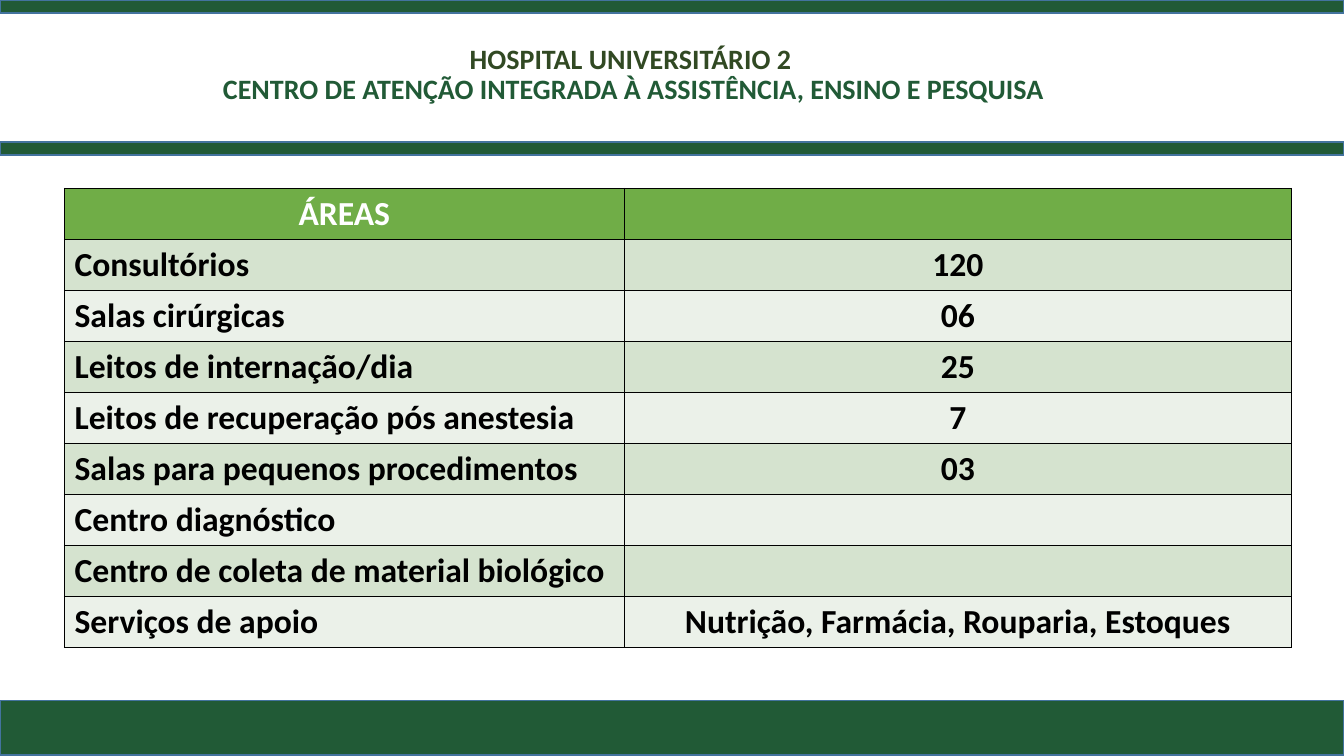
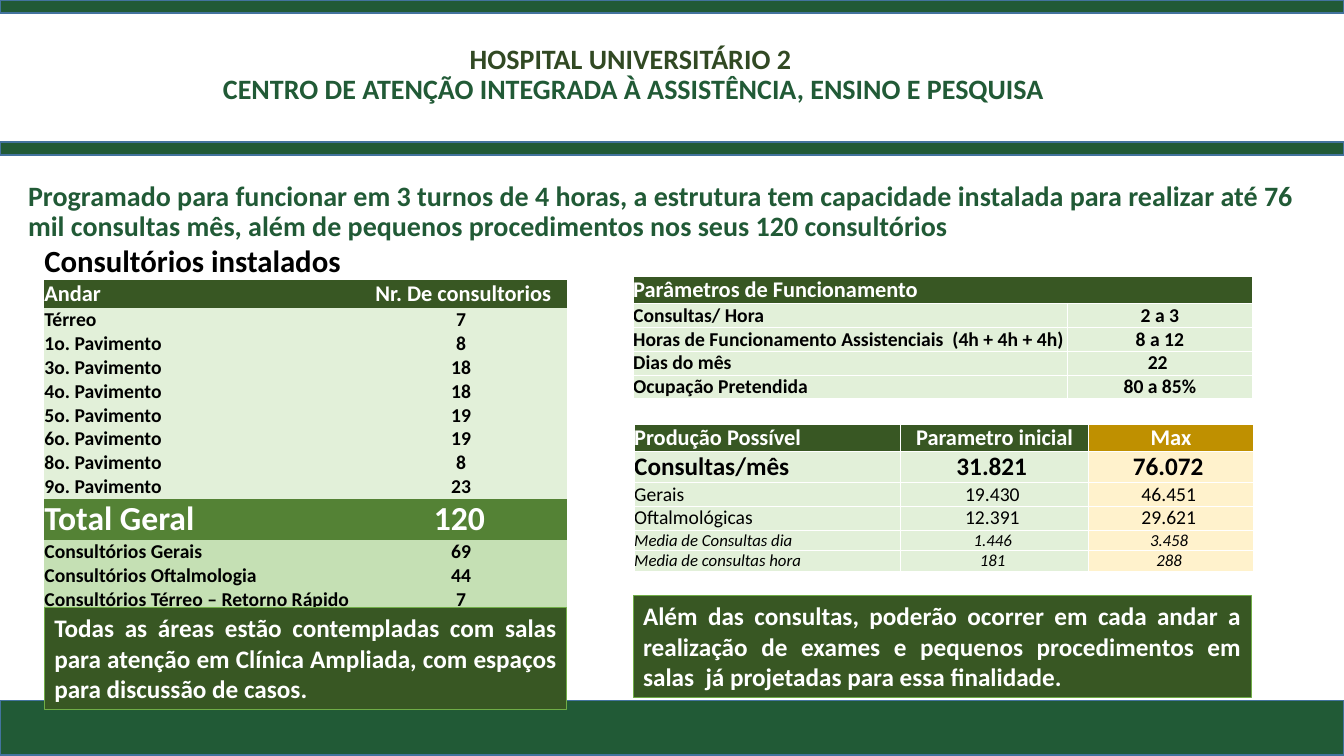
import dataclasses

import lxml.etree
import pptx
import pptx.dml.color
import pptx.enum.shapes
import pptx.enum.text
import pptx.oxml.ns
import pptx.util

Inches = pptx.util.Inches
Align = pptx.enum.text.PP_ALIGN
Anchor = pptx.enum.text.MSO_ANCHOR


@dataclasses.dataclass(frozen=True)
class Theme:
    font: str = "Calibri"
    band: str = "215A36"
    band_line: str = "43739E"
    title: str = "314923"
    dark: str = "385723"
    medium: str = "548235"
    accent: str = "70AD47"
    soft: str = "C5E0B4"
    pale: str = "E2F0D9"
    stripes: tuple = ("D5E3CF", "EBF1E9")
    gold: str = "BF9000"
    cream: str = "FFF2CC"
    black: str = "000000"
    white: str = "FFFFFF"
    title_size: int = 20
    area_size: int = 24
    caption_size: int = 22
    header_size: int = 16
    body_size: int = 14
    strong_size: int = 18
    note_size: int = 12
    line_height: float = 1.22


@dataclasses.dataclass(frozen=True)
class RowStyle:
    size: int
    color: str
    fills: tuple
    bold: bool = True
    italic: bool = False
    first_align: Align = Align.LEFT


theme = Theme()


def write_text(frame, lines, size, align=Align.LEFT, bold=True, italic=False, spacing=None):
    frame.word_wrap = True
    para = frame.paragraphs[0]
    para.alignment = align
    para.line_spacing = spacing
    for index, (text, color) in enumerate(lines):
        if index:
            para.add_line_break()
        span = para.add_run()
        span.text = text
        span.font.name = theme.font
        span.font.size = pptx.util.Pt(size)
        span.font.bold = bold
        span.font.italic = italic
        span.font.color.rgb = pptx.dml.color.RGBColor.from_string(color)


def add_grid(page, left, top, widths, rows, border=None, side=0, edge=0):
    heights = [style.size * theme.line_height / 72 + 2 * edge for style, _ in rows]
    table = page.shapes.add_table(
        len(rows), len(widths), Inches(left), Inches(top),
        Inches(sum(widths)), Inches(sum(heights)),
    ).table
    table.first_row = False
    table.horz_banding = False
    for column, width in zip(table.columns, widths):
        column.width = Inches(width)
    for row_index, (style, texts) in enumerate(rows):
        table.rows[row_index].height = Inches(heights[row_index])
        for column_index, (text, fill) in enumerate(zip(texts, style.fills)):
            cell = table.cell(row_index, column_index)
            cell.margin_left = cell.margin_right = Inches(side)
            cell.margin_top = cell.margin_bottom = Inches(edge)
            cell.vertical_anchor = Anchor.MIDDLE
            properties = cell._tc.get_or_add_tcPr()
            for tag in ("a:lnL", "a:lnR", "a:lnT", "a:lnB"):
                line = lxml.etree.SubElement(properties, pptx.oxml.ns.qn(tag), w="12700")
                if border:
                    solid = lxml.etree.SubElement(line, pptx.oxml.ns.qn("a:solidFill"))
                    lxml.etree.SubElement(solid, pptx.oxml.ns.qn("a:srgbClr"), val=border)
                else:
                    lxml.etree.SubElement(line, pptx.oxml.ns.qn("a:noFill"))
            if fill:
                cell.fill.solid()
                cell.fill.fore_color.rgb = pptx.dml.color.RGBColor.from_string(fill)
            else:
                cell.fill.background()
            if text is None:
                table.cell(row_index, column_index - 1).merge(cell)
            elif text:
                align = Align.CENTER if column_index else style.first_align
                write_text(cell.text_frame, [(text, style.color)], style.size, align,
                           style.bold, style.italic)


deck = pptx.Presentation()
deck.slide_width = Inches(13.33)
deck.slide_height = Inches(7.5)
pages = [deck.slides.add_slide(deck.slide_layouts[6]) for _ in range(2)]

for page in pages:
    for top, height in ((6.95, 0.54), (0, 0.13), (1.41, 0.13)):
        band = page.shapes.add_shape(
            pptx.enum.shapes.MSO_SHAPE.RECTANGLE,
            Inches(0), Inches(top), Inches(13.33), Inches(height),
        )
        band.shadow.inherit = False
        band.fill.solid()
        band.fill.fore_color.rgb = pptx.dml.color.RGBColor.from_string(theme.band)
        band.line.color.rgb = pptx.dml.color.RGBColor.from_string(theme.band_line)
        band.line.width = pptx.util.Pt(1)
    title = page.shapes.add_textbox(Inches(1.98), Inches(0.02), Inches(8.61), Inches(1.45))
    title.text_frame.vertical_anchor = Anchor.MIDDLE
    write_text(
        title.text_frame,
        [("HOSPITAL UNIVERSITÁRIO 2 ", theme.title),
         ("CENTRO DE ATENÇÃO INTEGRADA À ASSISTÊNCIA, ENSINO E PESQUISA", theme.band)],
        theme.title_size, Align.CENTER, spacing=0.9,
    )

areas_page, capacity_page = pages

area_header = RowStyle(theme.area_size, theme.white, (theme.accent,) * 2,
                       first_align=Align.CENTER)
area_styles = [RowStyle(theme.area_size, theme.black, (fill,) * 2) for fill in theme.stripes]
areas = [
    ("Consultórios", "120"),
    ("Salas cirúrgicas", "06"),
    ("Leitos de internação/dia", "25"),
    ("Leitos de recuperação pós anestesia", "7"),
    ("Salas para pequenos procedimentos", "03"),
    ("Centro diagnóstico", ""),
    ("Centro de coleta de material biológico", ""),
    ("Serviços de apoio", "Nutrição, Farmácia, Rouparia, Estoques"),
]
area_rows = [(area_header, ("ÁREAS", ""))]
area_rows += [(area_styles[index % 2], texts) for index, texts in enumerate(areas)]
add_grid(areas_page, 0.64, 1.87, (5.55, 6.62), area_rows, theme.black, side=0.1, edge=0.05)

intro = capacity_page.shapes.add_textbox(Inches(0.18), Inches(1.59), Inches(13.04), Inches(1.03))
intro.text_frame.vertical_anchor = Anchor.MIDDLE
write_text(
    intro.text_frame,
    [("Programado para funcionar em 3 turnos de 4 horas, a estrutura tem capacidade "
      "instalada para realizar até 76 mil consultas mês, além de pequenos procedimentos "
      "nos seus 120 consultórios", theme.band)],
    theme.title_size, spacing=0.9,
)

output_fills = (theme.pale, theme.pale, theme.cream)
caption = RowStyle(theme.caption_size, theme.black, (None, None))
header = RowStyle(theme.header_size, theme.white, (theme.dark, theme.dark, theme.gold))
body = RowStyle(theme.body_size, theme.black, output_fills)
total = RowStyle(theme.area_size, theme.white, (theme.medium,) * 2)
subtotal = RowStyle(theme.body_size, theme.black, (theme.soft,) * 2)
strong = RowStyle(theme.strong_size, theme.black, output_fills)
plain = RowStyle(theme.body_size, theme.black, output_fills, bold=False)
average = RowStyle(theme.note_size, theme.black, output_fills, bold=False, italic=True)

add_grid(capacity_page, 0.44, 2.41, (3.13, 2.05), [
    (caption, ("Consultórios instalados", None)),
    (header, ("Andar", "Nr. De consultorios")),
    (body, ("Térreo", "7 ")),
    (body, ("1o. Pavimento", "8 ")),
    (body, ("3o. Pavimento", "18 ")),
    (body, ("4o. Pavimento", "18 ")),
    (body, ("5o. Pavimento", "19 ")),
    (body, ("6o. Pavimento", "19 ")),
    (body, ("8o. Pavimento", "8 ")),
    (body, ("9o. Pavimento", "23 ")),
    (total, ("Total Geral", "120 ")),
    (subtotal, ("Consultórios Gerais", "69 ")),
    (subtotal, ("Consultórios Oftalmologia", "44 ")),
    (subtotal, ("Consultórios Térreo – Retorno Rápido", "7 ")),
])
add_grid(capacity_page, 6.28, 2.74, (4.31, 1.83), [
    (header, ("Parâmetros de Funcionamento", None)),
    (body, ("Consultas/ Hora", "2 a 3")),
    (body, ("Horas de Funcionamento Assistenciais  (4h + 4h + 4h)", "8 a 12")),
    (body, ("Dias do mês", "22 ")),
    (body, ("Ocupação Pretendida", "80 a 85%")),
], theme.white)
add_grid(capacity_page, 6.29, 4.21, (2.64, 1.87, 1.63), [
    (header, ("Produção Possível", "Parametro inicial", "Max")),
    (strong, ("Consultas/mês", "31.821 ", "76.072 ")),
    (plain, ("Gerais", "19.430 ", "46.451 ")),
    (plain, ("Oftalmológicas", "12.391 ", "29.621 ")),
    (average, ("Media de Consultas dia", "1.446 ", "3.458 ")),
    (average, ("Media de consultas hora", "181 ", "288 ")),
], theme.white)

callouts = [
    (6.28, 5.91, 6.13,
     "Além das consultas, poderão ocorrer em cada andar a realização de exames e "
     "pequenos procedimentos em salas  já projetadas para essa finalidade. "),
    (0.44, 6.03, 5.18,
     "Todas as áreas estão contempladas com salas para atenção em Clínica Ampliada, "
     "com espaços para discussão de casos."),
]
for left, top, width, text in callouts:
    box = capacity_page.shapes.add_shape(
        pptx.enum.shapes.MSO_SHAPE.RECTANGLE,
        Inches(left), Inches(top), Inches(width), Inches(1.01),
    )
    box.shadow.inherit = False
    box.fill.solid()
    box.fill.fore_color.rgb = pptx.dml.color.RGBColor.from_string(theme.dark)
    box.line.color.rgb = pptx.dml.color.RGBColor.from_string(theme.accent)
    box.line.width = pptx.util.Pt(0.5)
    box.text_frame.vertical_anchor = Anchor.TOP
    box.text_frame.auto_size = pptx.enum.text.MSO_AUTO_SIZE.SHAPE_TO_FIT_TEXT
    write_text(box.text_frame, [(text, theme.white)], theme.strong_size, Align.JUSTIFY)

deck.save("out.pptx")
